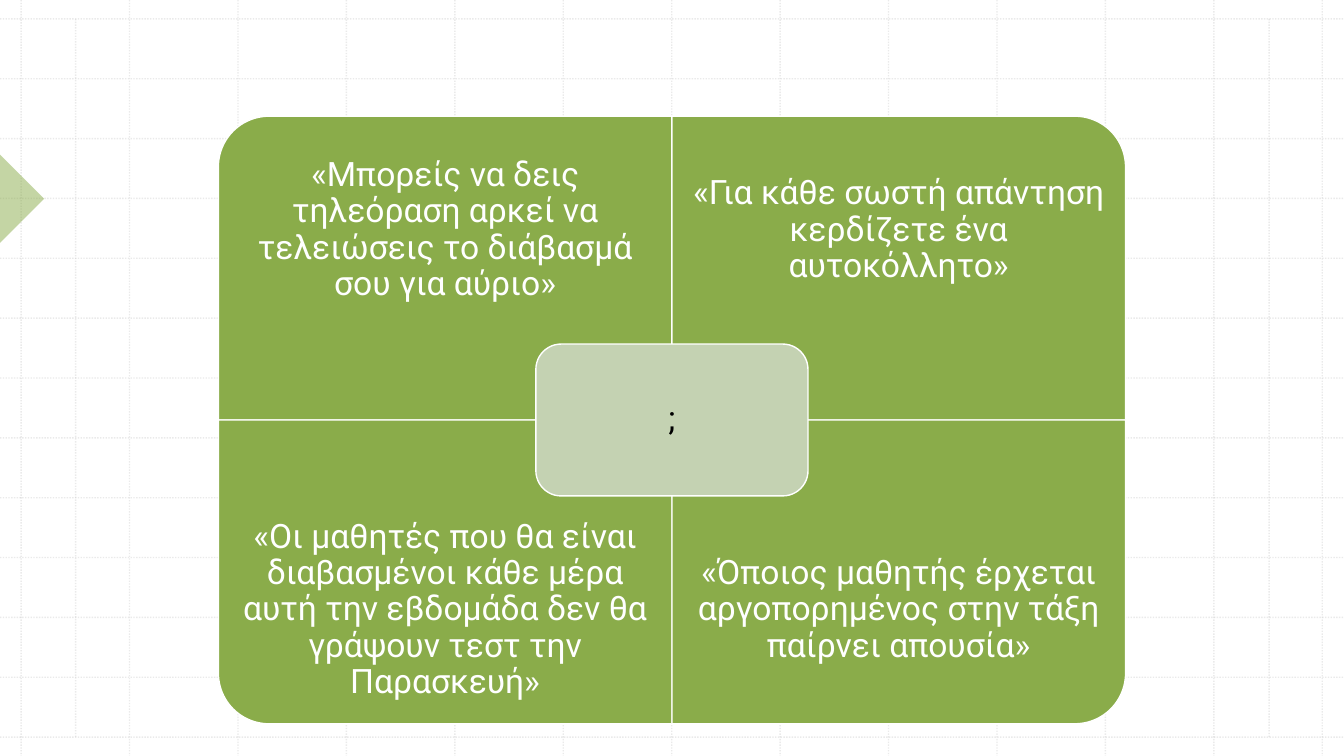
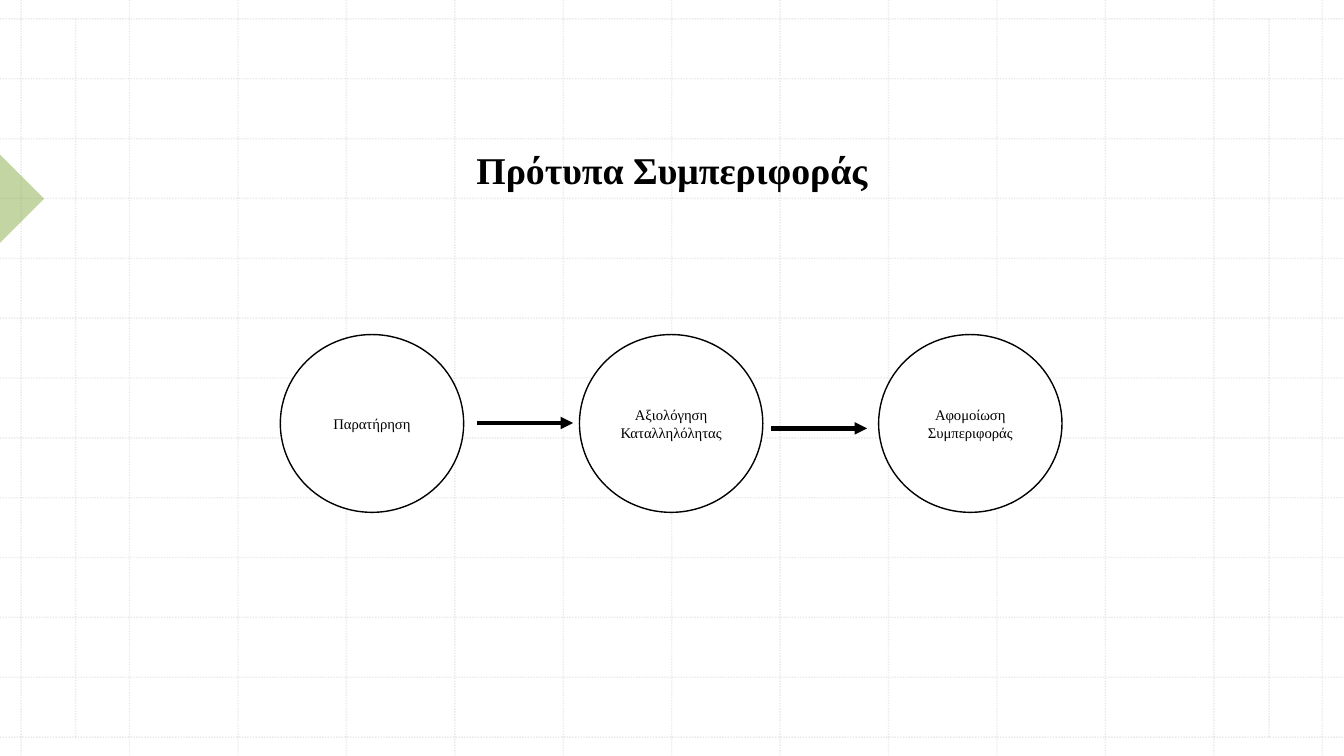
from pptx import Presentation, util as u
from pptx.dml.color import RGBColor
from pptx.enum import dml, shapes, text
from pptx.oxml.ns import qn
from lxml import etree

Pt = u.Pt
SLIDE_W, SLIDE_H = 960, 540
GREEN, PALE, GREY, WHITE, BLACK = "8AAC4A", "C4D2B2", "BCBCBC", "FFFFFF", "000000"
QUOTE = dict(name="Roboto", size=Pt(24))
LABEL = dict(name="Times New Roman", size=Pt(10.5))
TITLE = dict(name="Times New Roman", size=Pt(27), bold=True)


def paint(color, value, alpha=None):
    """Set a solid colour, with an optional opacity in percent."""
    color.rgb = RGBColor.from_string(value)
    if alpha is not None:
        for clr in color._xFill.iter(qn("a:srgbClr")):
            etree.SubElement(clr, qn("a:alpha")).set("val", str(alpha * 1000))


def add_text(sp, words, font, color, inset=None, spacing=None, anchor="MIDDLE"):
    tf = sp.text_frame
    tf.word_wrap = True
    tf.vertical_anchor = text.MSO_ANCHOR[anchor]
    if inset is not None:
        for side in ("left", "top", "right", "bottom"):
            setattr(tf, "margin_" + side, Pt(inset))
    p = tf.paragraphs[0]
    p.alignment = text.PP_ALIGN.CENTER
    p.line_spacing = spacing
    r = p.add_run()
    r.text = words
    for key, value in font.items():
        setattr(r.font, key, value)
    paint(r.font.fill_color if hasattr(r.font, "fill_color") else r.font.color, color)


def add_box(s, x, y, w, h):
    return s.shapes.add_textbox(Pt(x), Pt(y), Pt(w), Pt(h))


def add_shape(s, kind, x, y, w, h, fill, line=None, rotation=0, alpha=None):
    """Add a shape whose visible frame is x, y, w, h once it is turned."""
    if rotation in (90, 270):
        x, y, w, h = x + (w - h) / 2, y + (h - w) / 2, h, w
    sp = s.shapes.add_shape(shapes.MSO_SHAPE[kind], Pt(x), Pt(y), Pt(w), Pt(h))
    sp.rotation = rotation
    sp.shadow.inherit = False
    sp.fill.solid()
    sp.fill.fore_color.rgb = RGBColor.from_string(fill)
    if alpha is not None:
        set_alpha(sp, alpha)
    if line:
        paint(sp.line.color, line)
        sp.line.width = Pt(1)
    else:
        sp.line.fill.background()
    return sp


def set_alpha(sp, alpha):
    clr = next(sp.element.spPr.iter(qn("a:srgbClr")))
    etree.SubElement(clr, qn("a:alpha")).set("val", str(alpha * 1000))


def add_line(s, x1, y1, x2, y2, color, width):
    c = s.shapes.add_connector(shapes.MSO_CONNECTOR.STRAIGHT,
                               Pt(x1), Pt(y1), Pt(x2), Pt(y2))
    paint(c.line.color, color)
    c.line.width = Pt(width)
    etree.SubElement(c.element.spPr, qn("a:effectLst"))
    return c


def add_arrow(s, x1, y1, x2, y2):
    c = add_line(s, x1, y1, x2, y2, BLACK, 3)
    etree.SubElement(c.line._get_or_add_ln(), qn("a:tailEnd")).set("type", "triangle")


def add_background(layout, s):
    """Draw the dotted grid and side marker, then move them to the layout."""
    top, bottom = 13.5, 526.5
    columns = [(15.1 + 77.45 * i, 0, SLIDE_H) for i in range(13)]
    columns += [(x, top, bottom) for x in (54, 906.5)]
    grid = [(x, y1, x, y2) for x, y1, y2 in columns]
    grid += [(0, top + 42.75 * i, SLIDE_W, top + 42.75 * i) for i in range(13)]
    for ends in grid:
        c = add_line(s, *ends, GREY, 1)
        c.line.dash_style = dml.MSO_LINE.ROUND_DOT
        set_alpha(c, 30)
    add_shape(s, "RIGHT_TRIANGLE", -22.3, 119.7, 44.6, 44.6, GREEN,
              rotation=225, alpha=50)
    for sp in list(s.shapes):
        layout.shapes.element.append(sp.element)


def quotes_slide(s):
    mid_x, mid_y, w, h = 480, 300, 324, 217
    text_h = h * 0.75
    # column, row, rotation of the rounded corner, words
    quarters = [
        (0, 0, 270, "«Μπορείς να δεις τηλεόραση αρκεί να τελειώσεις το διάβασμά σου για αύριο»"),
        (1, 0, 0, "«Για κάθε σωστή απάντηση κερδίζετε ένα αυτοκόλλητο»"),
        (0, 1, 180, "«Οι μαθητές που θα είναι διαβασμένοι κάθε μέρα αυτή την εβδομάδα "
                    "δεν θα γράψουν τεστ την Παρασκευή»"),
        (1, 1, 90, "«Όποιος μαθητής έρχεται αργοπορημένος στην τάξη παίρνει απουσία»"),
    ]
    for col, row, rotation, words in quarters:
        x, y = mid_x + (col - 1) * w, mid_y + (row - 1) * h
        add_shape(s, "ROUND_1_RECTANGLE", x, y, w, h, GREEN, WHITE, rotation)
        box = add_box(s, x, y + row * (h - text_h), w, text_h)
        add_text(box, words, QUOTE, WHITE, 13.44, 0.9)

    # Centre box
    cw, ch = w * 0.6, h / 2
    sp = add_shape(s, "ROUNDED_RECTANGLE", mid_x - cw / 2, mid_y - ch / 2, cw, ch, PALE, WHITE)
    add_text(sp, ";", QUOTE, BLACK, 12, 0.9)


def models_slide(s):
    # Three steps
    steps = ["Παρατήρηση", "Αξιολόγηση Καταλληλόλητας", "Αφομοίωση Συμπεριφοράς"]
    for i, words in enumerate(steps):
        sp = add_shape(s, "OVAL", 200.2 + 213.7 * i, 239, 131, 127, WHITE, BLACK)
        add_text(sp, words, LABEL, BLACK)
    for x, y in ((341, 302.2), (551, 306)):
        add_arrow(s, x, y, x + 68.4, y)

    # Title
    add_text(add_box(s, 120, 101.5, 720, 40), "Πρότυπα Συμπεριφοράς", TITLE, BLACK, anchor="TOP")


def main():
    prs = Presentation()
    prs.slide_width, prs.slide_height = Pt(SLIDE_W), Pt(SLIDE_H)
    layout = prs.slide_layouts[6]
    first, second = (prs.slides.add_slide(layout) for _ in range(2))
    add_background(layout, first)
    quotes_slide(first)
    models_slide(second)
    prs.save("out.pptx")


if __name__ == "__main__":
    main()
